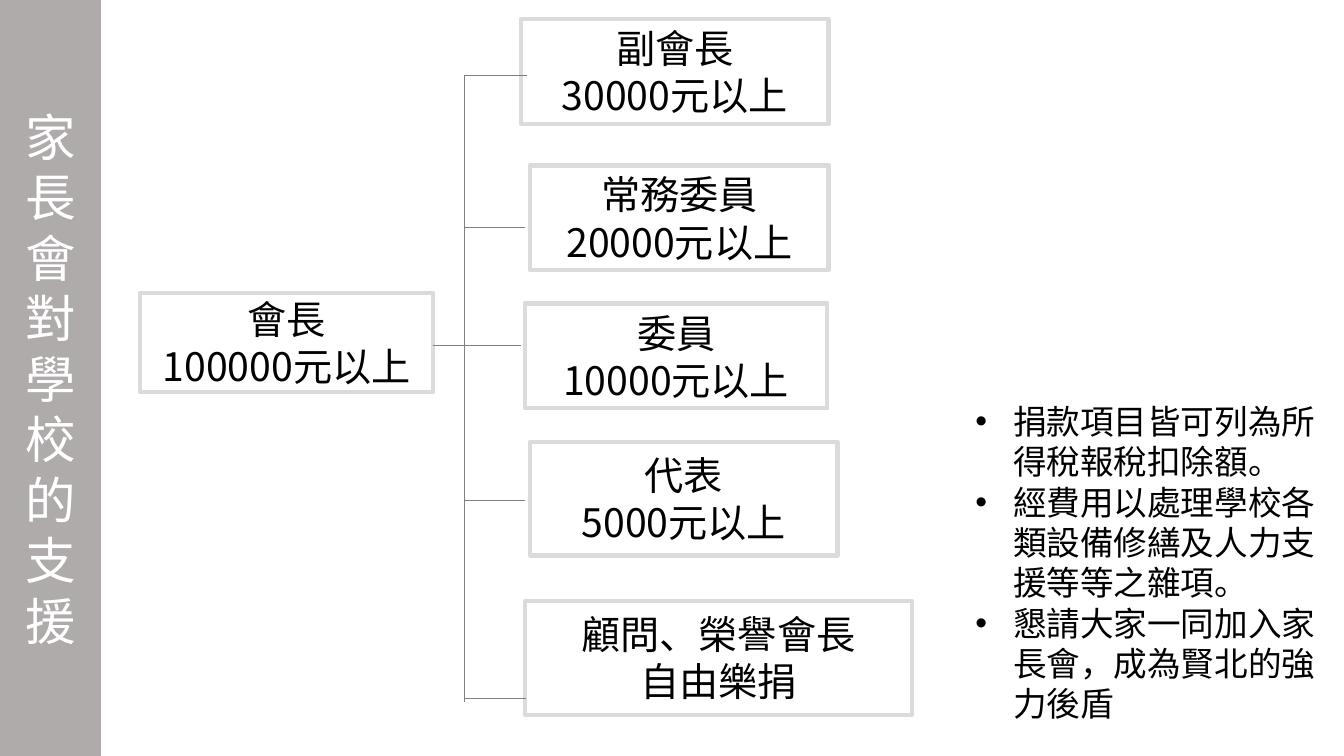
from dataclasses import dataclass

from lxml import etree
from pptx import Presentation
from pptx.dml.color import RGBColor
from pptx.enum.shapes import MSO_CONNECTOR, MSO_SHAPE
from pptx.enum.text import MSO_ANCHOR, MSO_AUTO_SIZE, PP_ALIGN
from pptx.oxml.ns import qn
from pptx.util import Cm, Pt

RECTANGLE = MSO_SHAPE.RECTANGLE
STRAIGHT = MSO_CONNECTOR.STRAIGHT
MIDDLE = MSO_ANCHOR.MIDDLE
CENTER, LEFT = PP_ALIGN.CENTER, PP_ALIGN.LEFT

TITLE = "家長會對學校的支援"
CHAIR = ("會長", "100000元以上")
# Role, donation, box (left, top, width, height), branch height and right end, in cm
MEMBERS = [
    ("副會長", "30000元以上", (13.13, 0.48, 7.75, 2.64), 1.9, 13.28),
    ("常務委員", "20000元以上", (13.36, 4.17, 7.52, 2.64), 5.74, 13.23),
    ("委員", "10000元以上", (13.23, 7.65, 7.62, 2.64), 8.69, 13.13),
    ("代表", "5000元以上", (13.36, 11.13, 7.75, 2.87), 12.6, 13.23),
    ("顧問、榮譽會長", "自由樂捐", (13.23, 15.14, 9.75, 2.87), 17.6, 13.26),
]
NOTES = [
    "捐款項目皆可列為所得稅報稅扣除額。",
    "經費用以處理學校各類設備修繕及人力支援等等之雜項。",
    "懇請大家一同加入家長會，成為賢北的強力後盾",
]

SLIDE_WIDTH, SLIDE_HEIGHT = 33.87, 19.05
TITLE_BOX = (0, 0, 2.54, SLIDE_HEIGHT)
CHAIR_BOX = (3.53, 7.39, 7.39, 2.49)
NOTES_BOX = (24.33, 9.98, 9.88, 8.46)
TRUNK_X, TRUNK_TOP, TRUNK_BOTTOM = 11.69, 1.88, 17.68
BULLET_INDENT = 0.95


@dataclass(frozen=True)
class Theme:
    font: str = "Noto Sans CJK SC"
    title_size: int = 36
    box_size: int = 28
    note_size: int = 24
    band: RGBColor = RGBColor(0xAF, 0xAB, 0xAB)
    border: RGBColor = RGBColor(0xDB, 0xDB, 0xDB)
    branch: RGBColor = RGBColor(0x80, 0x80, 0x80)
    light: RGBColor = RGBColor(0xFF, 0xFF, 0xFF)
    dark: RGBColor = RGBColor(0, 0, 0)


THEME = Theme()


def to_cm(lengths):
    return [Cm(length) for length in lengths]


def write(text_frame, lines, size, color, alignment):
    text_frame.text = "\n".join(lines)
    text_frame.word_wrap = True
    for paragraph in text_frame.paragraphs:
        paragraph.alignment = alignment
        paragraph.line_spacing = Pt(size * 1.2)
        for run in paragraph.runs:
            run.font.name = THEME.font
            run.font.size = Pt(size)
            run.font.color.rgb = color
            east_asian = etree.SubElement(run.font._element, qn("a:ea"))
            east_asian.set("typeface", THEME.font)


def add_title(slide):
    title = slide.shapes.title
    title.left, title.top, title.width, title.height = to_cm(TITLE_BOX)
    title.fill.solid()
    title.fill.fore_color.rgb = THEME.band
    write(title.text_frame, [TITLE], THEME.title_size, THEME.light, CENTER)
    title.text_frame.vertical_anchor = MIDDLE
    title.text_frame.auto_size = MSO_AUTO_SIZE.NONE


def add_role(slide, lines, box):
    shape = slide.shapes.add_shape(RECTANGLE, *to_cm(box))
    shape.shadow.inherit = False
    shape.fill.background()
    shape.line.color.rgb = THEME.border
    shape.line.width = Pt(3)
    write(shape.text_frame, lines, THEME.box_size, THEME.dark, CENTER)
    shape.text_frame.vertical_anchor = MIDDLE


def add_line(slide, *ends):
    line = slide.shapes.add_connector(STRAIGHT, *to_cm(ends))
    line.line.color.rgb = THEME.branch
    line.line.width = Pt(0.5)
    etree.SubElement(line._element.spPr, qn("a:effectLst"))


def add_notes(slide):
    text_frame = slide.shapes.add_textbox(*to_cm(NOTES_BOX)).text_frame
    write(text_frame, NOTES, THEME.note_size, THEME.dark, LEFT)
    for paragraph in text_frame.paragraphs:
        properties = paragraph._p.get_or_add_pPr()
        properties.set("marL", str(Cm(BULLET_INDENT)))
        properties.set("indent", str(-Cm(BULLET_INDENT)))
        etree.SubElement(properties, qn("a:buFont")).set("typeface", "Arial")
        etree.SubElement(properties, qn("a:buChar")).set("char", "•")


def main():
    presentation = Presentation()
    presentation.slide_width, presentation.slide_height = to_cm((SLIDE_WIDTH, SLIDE_HEIGHT))
    slide = presentation.slides.add_slide(presentation.slide_layouts.get_by_name("Title Only"))

    add_title(slide)
    add_role(slide, CHAIR, CHAIR_BOX)
    for role, donation, box, _, _ in MEMBERS:
        add_role(slide, (role, donation), box)
    add_notes(slide)

    add_line(slide, TRUNK_X, TRUNK_TOP, TRUNK_X, TRUNK_BOTTOM)
    chair_left, chair_top, chair_width, chair_height = CHAIR_BOX
    for _, _, _, y, end in MEMBERS:
        level_with_chair = chair_top < y < chair_top + chair_height
        start = chair_left + chair_width if level_with_chair else TRUNK_X
        add_line(slide, start, y, end, y)

    presentation.save("out.pptx")


if __name__ == "__main__":
    main()
